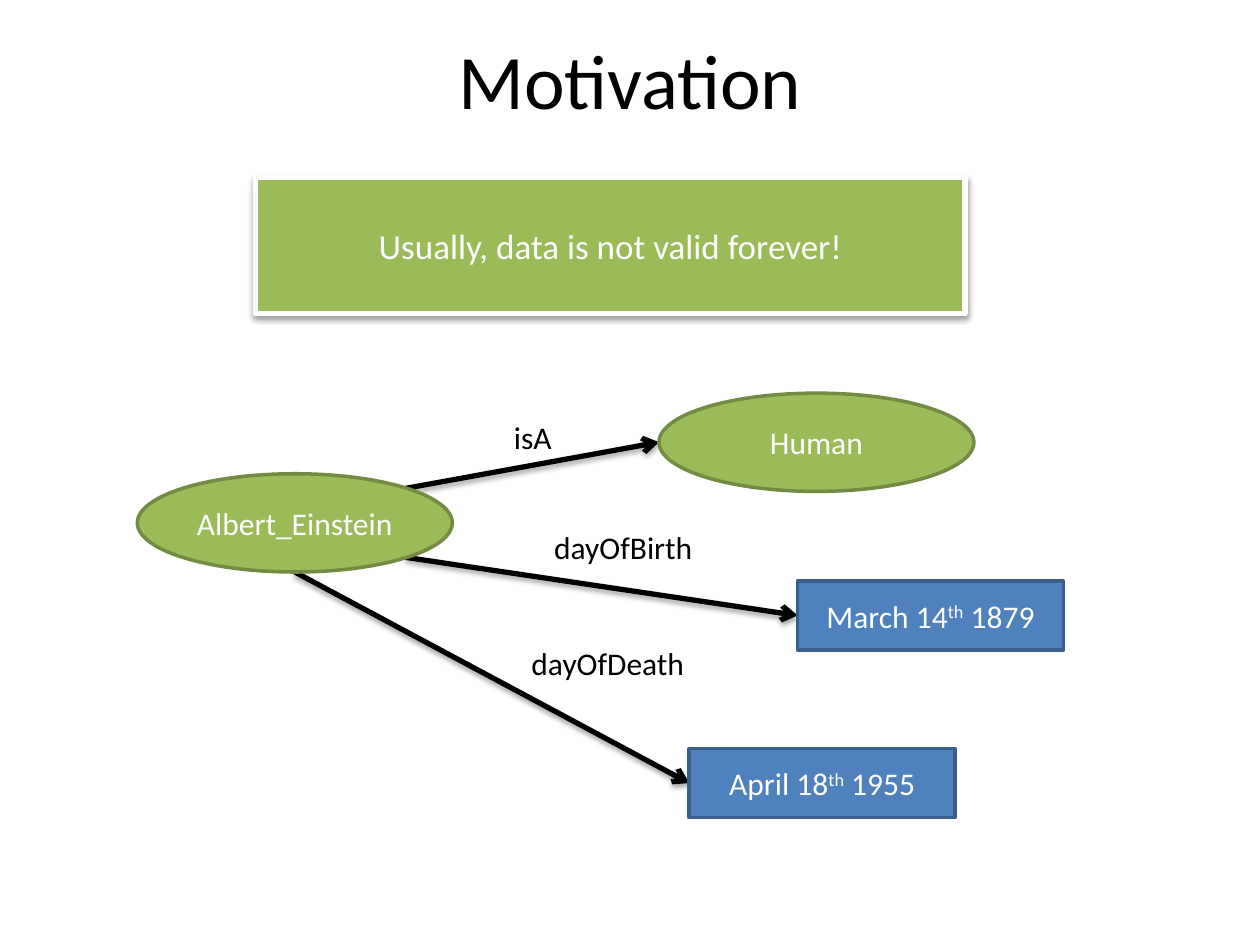
from dataclasses import dataclass

from lxml.etree import SubElement as Sub
from pptx import Presentation
from pptx.dml.color import RGBColor as Rgb
from pptx.enum.shapes import MSO_CONNECTOR as Link, MSO_SHAPE as Kind
from pptx.enum.text import MSO_ANCHOR as Anchor, PP_ALIGN as Align
from pptx.oxml.ns import qn
from pptx.util import Inches, Pt


@dataclass(frozen=True)
class Theme:
    font: str = "Calibri"
    black: str = "000000"
    white: str = "FFFFFF"
    green: str = "9BBB59"
    moss: str = "738A42"
    blue: str = "4F81BD"
    navy: str = "3A5F8C"
    title: int = 44
    lead: int = 20
    body: int = 18
    thin: int = 2
    thick: int = 3


@dataclass(frozen=True)
class Box:
    """An area in cells of a grid with 100 columns and 75 rows."""
    col: float
    row: float
    cols: float
    rows: float

    def inner(self, col, row, cols, rows):
        return Box(self.col + col, self.row + row, cols, rows)

    def point(self, x, y):
        """Give the place at shares x and y of the area."""
        return cell(self.col + x * self.cols), cell(self.row + y * self.rows)

    def place(self):
        return *self.point(0, 0), cell(self.cols), cell(self.rows)


THEME = Theme()


def cell(count):
    return Inches(count / 10)


def write(shape, runs, size, color, align=Align.CENTER):
    """Fill a shape with runs; every second run is raised."""
    frame = shape.text_frame
    frame.vertical_anchor = Anchor.MIDDLE
    para = frame.paragraphs[0]
    para.alignment = align
    for i, text in enumerate(runs):
        run = para.add_run()
        run.text = text
        run.font.name, run.font.size = THEME.font, Pt(size)
        run.font.color.rgb = Rgb.from_string(color)
        if i % 2:
            run._r.get_or_add_rPr().set("baseline", "30000")


def shade(effects, alpha, gap):
    """Add a soft shadow that falls straight down."""
    drop = Sub(effects, qn("a:outerShdw"), blurRad=str(Pt(3.1)),
               dist=str(Pt(gap)), dir="5400000", rotWithShape="0")
    color = Sub(drop, qn("a:srgbClr"), val=THEME.black)
    Sub(color, qn("a:alpha"), val=str(alpha * 1000))


def add_node(slide, box, kind, runs, fill, edge, size=THEME.body, width=THEME.thin):
    node = slide.shapes.add_shape(kind, *box.place())
    node.shadow.inherit = False
    node.fill.solid()
    node.fill.fore_color.rgb = Rgb.from_string(fill)
    node.line.color.rgb = Rgb.from_string(edge)
    node.line.width = Pt(width)
    node.text_frame.word_wrap = True
    write(node, runs, size, THEME.white)
    return node


def add_label(slide, box, text):
    label = slide.shapes.add_textbox(*box.place())
    label.text_frame.word_wrap = False
    write(label, [text], THEME.body, THEME.black, Align.LEFT)


def add_arrow(slide, start, end, goal=None):
    """Draw an arrow behind the nodes, joined to the left of goal if given."""
    arrow = slide.shapes.add_connector(Link.STRAIGHT, *start, *end)
    if goal is not None:
        arrow.end_connect(goal, 1)
    arrow.line.color.rgb = Rgb.from_string(THEME.black)
    arrow.line.width = Pt(THEME.thick)
    Sub(arrow.line._ln, qn("a:tailEnd"), type="arrow")
    shade(Sub(arrow._element.spPr, qn("a:effectLst")), 35, 1.8)
    slide.shapes._spTree.insert(2, arrow._element)


def add_title(slide, box):
    title = slide.shapes.add_textbox(*box.place())
    title.text_frame.word_wrap = True
    write(title, ["Motivation"], THEME.title, THEME.black)


def add_banner(slide, box):
    banner = add_node(slide, box, Kind.RECTANGLE,
                      ["Usually, data is not valid forever!"],
                      THEME.green, THEME.white, THEME.lead, THEME.thick)
    shade(banner._element.spPr.find(qn("a:effectLst")), 38, 1.6)


def add_graph(slide, box):
    oval, date = (25, 7.8), (21.1, 5.5)
    person = box.inner(0, 6.4, *oval)
    human = box.inner(41.4, 0, *oval)
    for area, name in ((person, "Albert_Einstein"), (human, "Human")):
        add_node(slide, area, Kind.OVAL, [name], THEME.green, THEME.moss)

    add_arrow(slide, person.point(0.85, 0.15), human.point(0, 0.5))
    dates = (
        (52.4, 14.9, ["March 14", "th", " 1879"], (0.85, 0.85)),
        (43.8, 28.2, ["April 18", "th", " 1955"], (0.5, 1)),
    )
    for col, row, runs, start in dates:
        area = box.inner(col, row, *date)
        goal = add_node(slide, area, Kind.RECTANGLE, runs, THEME.blue, THEME.navy)
        add_arrow(slide, person.point(*start), area.point(0, 0.5), goal)

    labels = (
        (28.9, 1.5, 5, "isA"),
        (32.1, 10.2, 13.1, "dayOfBirth"),
        (30.3, 19.4, 14.3, "dayOfDeath"),
    )
    for col, row, cols, text in labels:
        add_label(slide, box.inner(col, row, cols, 4), text)


def main():
    deck = Presentation()
    deck.slide_width, deck.slide_height = cell(100), cell(75)
    slide = deck.slides.add_slide(deck.slide_layouts[6])
    add_title(slide, Box(5, 0, 90, 12.5))
    add_banner(slide, Box(20.3, 14.1, 56.3, 10.8))
    add_graph(slide, Box(10.9, 31.2, 73.5, 33.7))
    deck.save("out.pptx")


if __name__ == "__main__":
    main()
